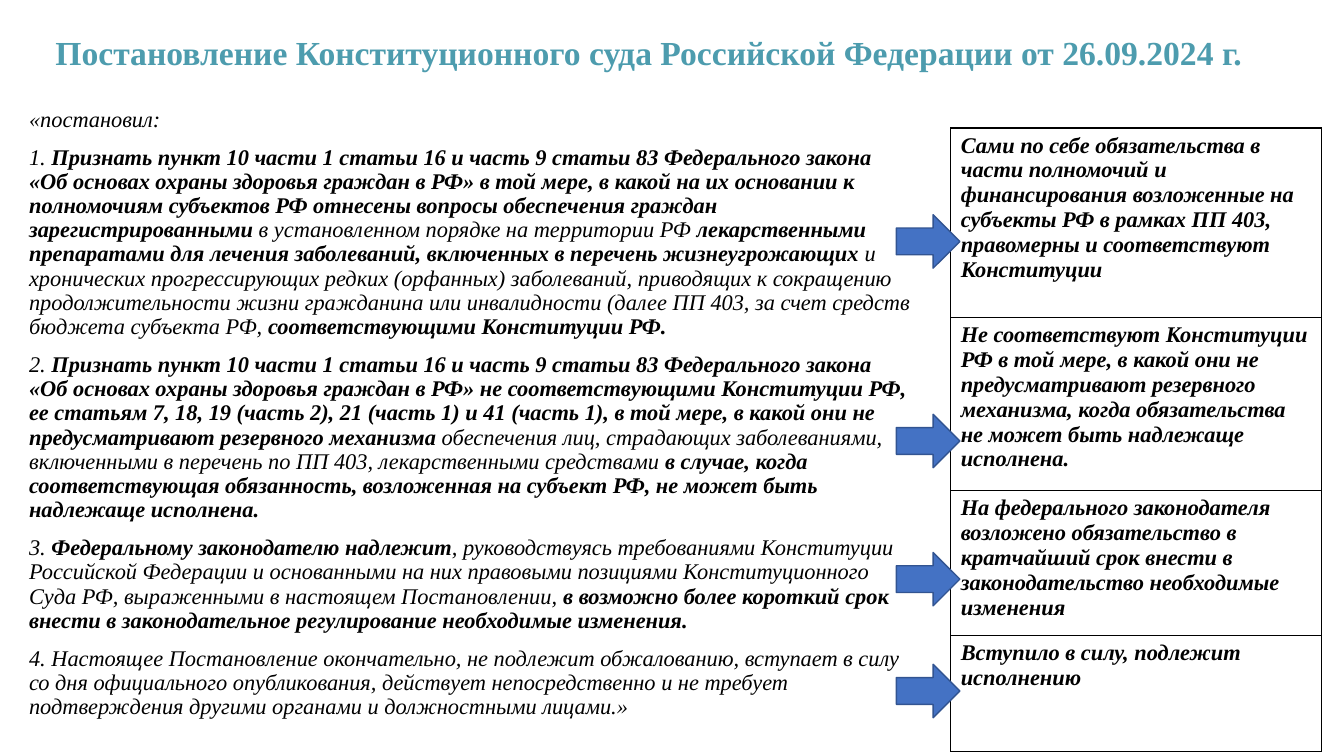
from lxml.etree import SubElement
from pptx import Presentation
from pptx.dml.color import RGBColor
from pptx.enum.shapes import MSO_SHAPE
from pptx.enum.text import MSO_ANCHOR, MSO_AUTO_SIZE, PP_ALIGN
from pptx.oxml.ns import qn
from pptx.util import Inches, Pt

WIDE, HIGH = Inches(13.33), Inches(7.5)
FONT = "Times New Roman"
HUES = {"title": "4D9CAE", "text": "000000", "arrow": "4472C4", "edge": "325491"}

# Boxes are left, top, width, height in percent of the slide
TITLE_BOX = (3.38, 3.2, 93.85, 8)
RULING_BOX = (1.43, 13.6, 67.14, 84.8)
NOTES_BOX = (70.74, 16.93, 27.61, 78.93)

TITLE = "Постановление Конституционного суда Российской Федерации от 26.09.2024 г."

# Asterisks enclose the bold parts
RULING = [
    "«постановил:",
    "1. *Признать пункт 10 части 1 статьи 16 и часть 9 статьи 83 Федерального закона "
    "«Об основах охраны здоровья граждан в РФ» в той мере, в какой на их основании к "
    "полномочиям субъектов РФ отнесены вопросы обеспечения граждан зарегистрированными* "
    "в установленном порядке на территории РФ *лекарственными препаратами для лечения "
    "заболеваний, включенных в перечень жизнеугрожающих *и хронических прогрессирующих "
    "редких (орфанных) заболеваний, приводящих к сокращению продолжительности жизни "
    "гражданина или инвалидности (далее ПП 403, за счет средств бюджета субъекта РФ, "
    "*соответствующими Конституции РФ.*",
    "2. *Признать пункт 10 части 1 статьи 16 и часть 9 статьи 83 Федерального закона "
    "«Об основах охраны здоровья граждан в РФ» не соответствующими Конституции РФ, ее "
    "статьям 7, 18, 19 (часть 2), 21 (часть 1) и 41 (часть 1), в той мере, в какой они не "
    "предусматривают резервного механизма *обеспечения лиц, страдающих заболеваниями, "
    "включенными в перечень по ПП 403, лекарственными средствами *в случае, когда "
    "соответствующая обязанность, возложенная на субъект РФ, не может быть надлежаще "
    "исполнена.*",
    "3. *Федеральному законодателю надлежит*, руководствуясь требованиями Конституции "
    "Российской Федерации и основанными на них правовыми позициями Конституционного Суда "
    "РФ, выраженными в настоящем Постановлении, *в возможно более короткий срок внести в "
    "законодательное регулирование необходимые изменения.*",
    "4. Настоящее Постановление окончательно, не подлежит обжалованию, вступает в силу со "
    "дня официального опубликования, действует непосредственно и не требует подтверждения "
    "другими органами и должностными лицами.»",
]

# Row height, arrow top below the table top, text
NOTES = [
    (25.07, 11.47, "Сами по себе обязательства в части полномочий и финансирования "
     "возложенные на субъекты РФ в рамках ПП 403, правомерны и соответствуют Конституции"),
    (22.93, 37.87, "Не соответствуют Конституции РФ в той мере, в какой они не "
     "предусматривают резервного механизма, когда обязательства не может быть надлежаще "
     "исполнена."),
    (15.6, 56.14, "На федерального законодателя возложено обязательство в кратчайший срок "
     "внести в законодательство необходимые изменения"),
    (15.33, 70.94, "Вступило в силу, подлежит исполнению"),
]


def across(share):
    return int(WIDE * share / 100)


def down(share):
    return int(HIGH * share / 100)


def place(box):
    left, top, width, height = box
    return across(left), down(top), across(width), down(height)


def style(run, size, hue, bold, italic=False):
    font = run.font
    font.name, font.size, font.bold, font.italic = FONT, Pt(size), bold, italic
    font.color.rgb = RGBColor.from_string(HUES[hue])


def add_title(slide, box):
    title = slide.shapes.title
    title.left, title.top, title.width, title.height = place(box)
    frame = title.text_frame
    frame.text = TITLE
    frame.vertical_anchor = MSO_ANCHOR.MIDDLE
    frame.auto_size = MSO_AUTO_SIZE.NONE
    line = frame.paragraphs[0]
    line.alignment, line.line_spacing = PP_ALIGN.LEFT, 0.9
    style(line.runs[0], 24, "title", True)


def add_ruling(slide, box):
    frame = slide.shapes.add_textbox(*place(box)).text_frame
    frame.word_wrap = True
    for i, text in enumerate(RULING):
        line = frame.add_paragraph() if i else frame.paragraphs[0]
        line.line_spacing, line.space_before = 0.9, Pt(10)
        for j, part in enumerate(text.split("*")):
            if part:
                run = line.add_run()
                run.text = part
                style(run, 16, "text", j % 2 == 1, True)


def frame_cell(cell):
    cell.fill.background()
    props = cell._tc.get_or_add_tcPr()
    for i, side in enumerate(("a:lnL", "a:lnR", "a:lnT", "a:lnB")):
        edge = props.makeelement(qn(side), {"w": str(Pt(1))})
        fill = SubElement(edge, qn("a:solidFill"))
        SubElement(fill, qn("a:srgbClr"), val=HUES["text"])
        props.insert(i, edge)


def add_arrow(slide, box):
    arrow = slide.shapes.add_shape(MSO_SHAPE.RIGHT_ARROW, *place(box))
    arrow.shadow.inherit = False
    arrow.fill.solid()
    arrow.fill.fore_color.rgb = RGBColor.from_string(HUES["arrow"])
    arrow.line.color.rgb = RGBColor.from_string(HUES["edge"])
    arrow.line.width = Pt(1)


def add_notes(slide, box):
    """Table of conclusions with an arrow leading into each row."""
    left, top = box[:2]
    table = slide.shapes.add_table(len(NOTES), 1, *place(box)).table
    table.first_row = table.horz_banding = False
    for row, (height, drop, text) in zip(table.rows, NOTES):
        row.height = down(height)
        cell = row.cells[0]
        cell.text_frame.text = text
        style(cell.text_frame.paragraphs[0].runs[0], 16, "text", True, True)
        frame_cell(cell)
        add_arrow(slide, (left - 4.05, top + drop, 4.73, 7.07))


def main():
    deck = Presentation()
    deck.slide_width, deck.slide_height = WIDE, HIGH
    slide = deck.slides.add_slide(deck.slide_layouts.get_by_name("Title Only"))
    add_title(slide, TITLE_BOX)
    add_ruling(slide, RULING_BOX)
    add_notes(slide, NOTES_BOX)
    deck.save("out.pptx")


if __name__ == "__main__":
    main()
